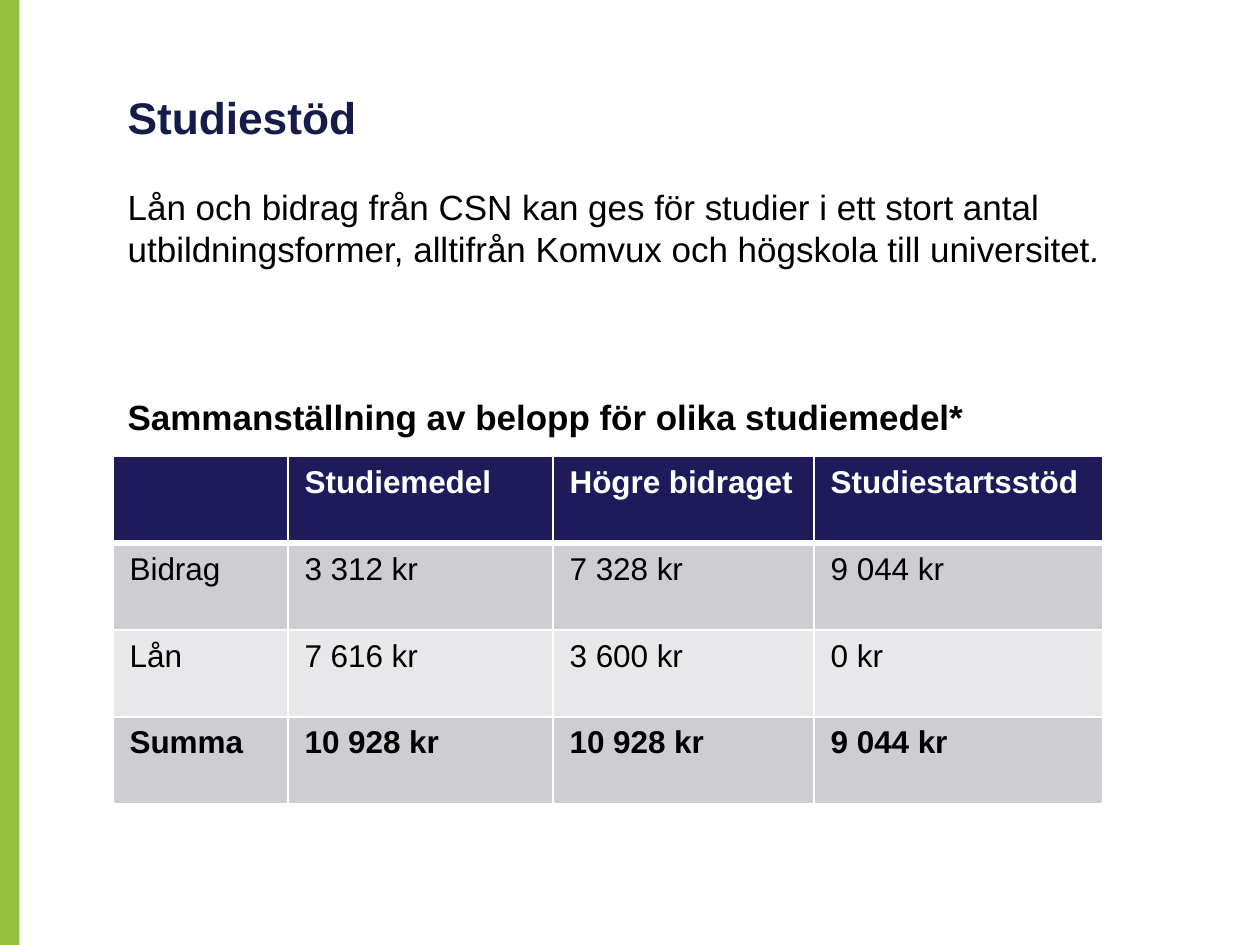
from pptx import Presentation
from pptx.dml.color import RGBColor as Rgb
from pptx.enum.shapes import MSO_SHAPE as Form
from pptx.enum.text import MSO_ANCHOR as Anchor, MSO_AUTO_SIZE as Fit, PP_ALIGN as Align
from pptx.oxml import parse_xml
from pptx.oxml.ns import nsdecls
from pptx.util import Pt

WIDE, HIGH = 540, 405
HUES = {
    "bar": "95C23D", "title": "161C4A", "text": "000000", "white": "FFFFFF",
    "head": "1F1B5A", "dark": "CDCDD2", "light": "E8E8EA",
}
# Each paragraph: runs as (text, italic), size, colour, bold, space before, line pitch
TEXTS = [
    ([("Studiestöd", False)], 19, "title", True, 0, None),
    ([("Lån och bidrag från CSN kan ges för studier i ett stort antal "
       "utbildningsformer, alltifrån Komvux och högskola till universitet", False),
      (".", True)], 15, "text", False, 18, 18),
    ([("Sammanställning av belopp för olika studiemedel*", False)],
     15, "text", True, 54, 18),
]
COLS = [75, 113.6, 111.9, 123.9]
ROWS = [
    ["", "Studiemedel", "Högre bidraget", "Studiestartsstöd"],
    ["Bidrag", "3 312 kr", "7 328 kr", "9 044 kr"],
    ["Lån", "7 616 kr", "3 600 kr", "0 kr"],
    ["Summa", "10 928 kr", "10 928 kr", "9 044 kr"],
]


class Page:
    """Style and current slide; all lengths in points."""

    def __init__(self, deck, face="Arial"):
        self.slide = deck.slides.add_slide(deck.slide_layouts[5])
        self.face = face

    def hue(self, name):
        return Rgb.from_string(HUES[name])

    def style(self, para, size, hue, bold):
        font = para.font
        font.name, font.size, font.bold = self.face, Pt(size), bold
        font.color.rgb = self.hue(hue)

    def bar(self, x, y, w, h, hue):
        box = self.slide.shapes.add_shape(Form.RECTANGLE, Pt(x), Pt(y), Pt(w), Pt(h))
        box.shadow.inherit = False
        box.fill.solid()
        box.fill.fore_color.rgb = self.hue(hue)
        box.line.fill.background()

    def title(self, x, y, w, h, texts):
        box = self.slide.shapes.title
        box.left, box.top, box.width, box.height = Pt(x), Pt(y), Pt(w), Pt(h)
        frame = box.text_frame
        frame.word_wrap, frame.auto_size = True, Fit.NONE
        frame.vertical_anchor = Anchor.TOP
        frame.margin_left = frame.margin_right = Pt(7.2)
        frame.margin_top, frame.margin_bottom = Pt(5.4), Pt(3.6)
        for i, (runs, size, hue, bold, gap, pitch) in enumerate(texts):
            para = frame.add_paragraph() if i else frame.paragraphs[0]
            para.alignment = Align.LEFT
            para.space_before, para.space_after = Pt(gap), Pt(0)
            para.line_spacing = Pt(pitch) if pitch else 1.0
            self.style(para, size, hue, bold)
            for text, slant in runs:
                run = para.add_run()
                run.text = text
                if slant:
                    run.font.italic = True

    def edges(self, cell, top, low):
        props = cell._tc.get_or_add_tcPr()
        for side, width in (("L", 1), ("R", 1), ("T", top), ("B", low)):
            props.append(parse_xml(
                f'<a:ln{side} {nsdecls("a")} w="{Pt(width)}"><a:solidFill>'
                f'<a:srgbClr val="{HUES["white"]}"/></a:solidFill></a:ln{side}>'))

    def table(self, x, y, cols, high, rows):
        grid = self.slide.shapes.add_table(
            len(rows), len(cols), Pt(x), Pt(y), Pt(sum(cols)), Pt(high * len(rows))).table
        for col, width in zip(grid.columns, cols):
            col.width = Pt(width)
        last = len(rows) - 1
        for r, row in enumerate(rows):
            grid.rows[r].height = Pt(high)
            fill = "head" if r == 0 else "dark" if r % 2 else "light"
            for c, text in enumerate(row):
                cell = grid.cell(r, c)
                cell.text = text
                self.edges(cell, 3 if r == 1 else 1, 3 if r == 0 else 1)
                cell.fill.solid()
                cell.fill.fore_color.rgb = self.hue(fill)
                self.style(cell.text_frame.paragraphs[0], 13.5,
                           "text" if r else "white", r in (0, last))


def main():
    deck = Presentation()
    deck.slide_width, deck.slide_height = Pt(WIDE), Pt(HIGH)
    page = Page(deck)
    # Green edge
    page.bar(0, 0, 8.4, HIGH, "bar")
    # Heading and text
    page.title(47.5, 33.1, 448.6, 331.9, TEXTS)
    # Amounts
    page.table(48.4, 195.6, COLS, 37.3, ROWS)
    deck.save("out.pptx")


if __name__ == "__main__":
    main()
